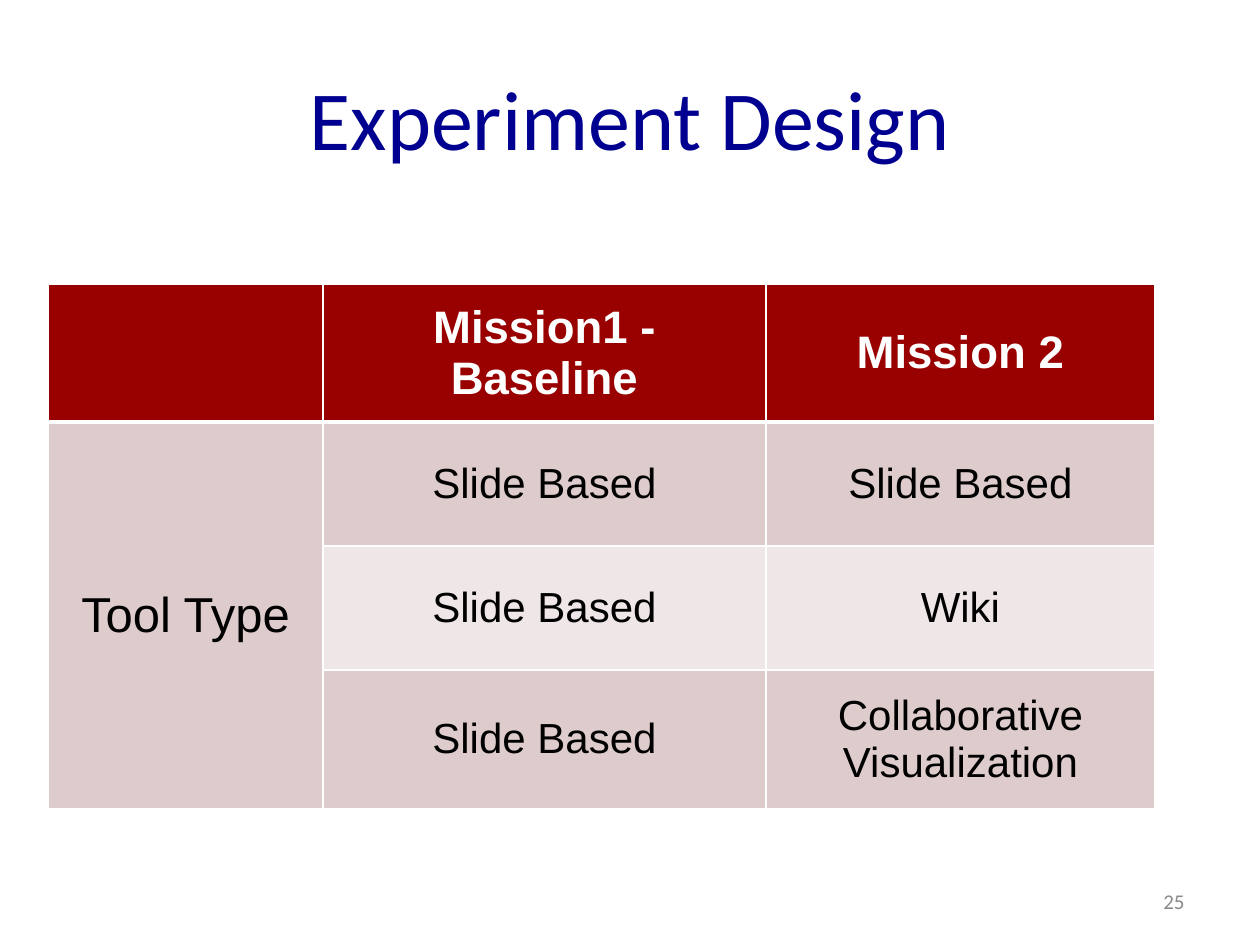
import pptx
import pptx.util
import pptx.dml.color
import pptx.enum.text
import pptx.oxml
import pptx.oxml.ns

SCALE = 914400 / 126
ALIGN = pptx.enum.text.PP_ALIGN
MIDDLE = pptx.enum.text.MSO_ANCHOR.MIDDLE
WHITE, BLACK, NAVY, GREY = "FFFFFF", "000000", "000090", "898989"
RED, DARK, LIGHT = "990000", "DECCCC", "EFE7E7"
COLS = [275, 443, 389]
ROWS = [138, 124, 124, 139]
FILLS = [RED, DARK, LIGHT, DARK]
TEXTS = [
    ["", "Mission1 - Baseline", "Mission 2"],
    ["Tool Type", "Slide Based", "Slide Based"],
    ["", "Slide Based", "Wiki"],
    ["", "Slide Based", "Collaborative Visualization"],
]


def px(n):
    return pptx.util.Emu(round(n * SCALE))


def color(code):
    return pptx.dml.color.RGBColor.from_string(code)


def write(frame, text, size, face, code, align, bold=False):
    para = frame.paragraphs[0]
    para.alignment = align
    run = para.add_run()
    run.text = text
    font = run.font
    font.size = pptx.util.Pt(size)
    font.name = face
    font.bold = bold
    font.color.rgb = color(code)


def place(shape, left, top, width, height):
    shape.left, shape.top = px(left), px(top)
    shape.width, shape.height = px(width), px(height)


def title(slide, text):
    shape = slide.shapes.title
    place(shape, 63, 38, 1134, 157)
    shape.text_frame.vertical_anchor = MIDDLE
    write(shape.text_frame, text, 48, "Calibri", NAVY, ALIGN.CENTER)


def number(slide, text):
    box = slide.shapes.add_textbox(px(903), px(876), px(294), px(50))
    frame = box.text_frame
    frame.word_wrap = True
    frame.vertical_anchor = MIDDLE
    write(frame, text, 12, "Calibri", GREY, ALIGN.RIGHT)


def border(cell, side, points):
    line = pptx.oxml.parse_xml(
        f'<a:ln{side} {pptx.oxml.ns.nsdecls("a")} w="{points * 12700}">'
        f'<a:solidFill><a:srgbClr val="{WHITE}"/></a:solidFill></a:ln{side}>'
    )
    cell._tc.get_or_add_tcPr().append(line)


def paint(cell, row, col):
    thick = {(0, "B"), (1, "T")}
    for side in "LRTB":
        border(cell, side, 3 if (row, side) in thick else 1)
    cell.fill.solid()
    cell.fill.fore_color.rgb = color(FILLS[row])
    cell.vertical_anchor = MIDDLE
    text = TEXTS[row][col]
    if text:
        head = row == 0
        size = 26 if head else 28 if col == 0 else 24
        code = WHITE if head else BLACK
        write(cell.text_frame, text, size, "Arial", code, ALIGN.CENTER, head)


def grid(slide):
    shape = slide.shapes.add_table(
        len(ROWS), len(COLS), px(48), px(284), px(sum(COLS)), px(sum(ROWS))
    )
    table = shape.table
    table.horz_banding = False
    for col, width in zip(table.columns, COLS):
        col.width = px(width)
    for row, height in zip(table.rows, ROWS):
        row.height = px(height)
    for row in range(len(ROWS)):
        for col in range(len(COLS)):
            paint(table.cell(row, col), row, col)
    table.cell(1, 0).merge(table.cell(3, 0))


def main():
    deck = pptx.Presentation()
    deck.slide_width, deck.slide_height = px(1260), px(945)
    slide = deck.slides.add_slide(deck.slide_layouts[5])
    title(slide, "Experiment Design")
    number(slide, "25")
    grid(slide)
    deck.save("out.pptx")


if __name__ == "__main__":
    main()
